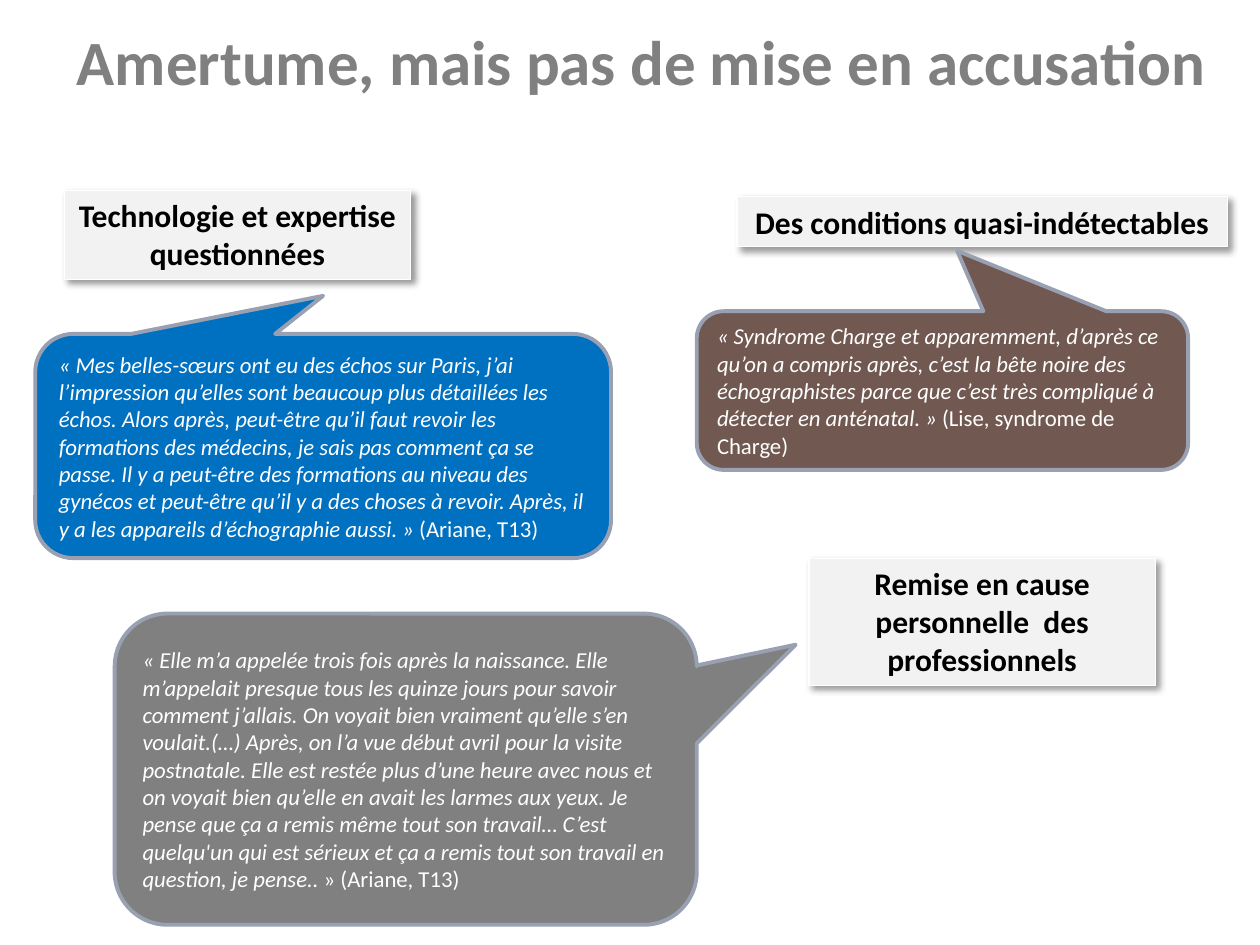
from lxml import etree
from pptx import Presentation
from pptx.dml.color import RGBColor
from pptx.enum import shapes, text
from pptx.oxml.ns import qn
from pptx.util import Inches, Pt

FONT = "Calibri"
WHITE = "FFFFFF"


def rgb(value):
    return RGBColor.from_string(value)


def add_run(paragraph, words, size, color, bold=False, italic=False):
    run = paragraph.add_run()
    run.text = words
    run.font.name = FONT
    run.font.size = Pt(size)
    run.font.color.rgb = rgb(color)
    run.font.bold = bold
    run.font.italic = italic


def paint(shape, fill, line, line_width):
    shape.shadow.inherit = False
    shape.fill.solid()
    shape.fill.fore_color.rgb = rgb(fill)
    shape.line.color.rgb = rgb(line)
    shape.line.width = Pt(line_width)


def add_drop_shadow(shape):
    """Black shadow at 40 % opacity, falling to the lower right."""
    effects = shape._element.spPr.find(qn("a:effectLst"))
    shadow = etree.SubElement(
        effects, qn("a:outerShdw"), blurRad=str(Pt(4)), dist=str(Pt(3)),
        dir=str(45 * 60000), algn="tl", rotWithShape="0")
    color = etree.SubElement(shadow, qn("a:srgbClr"), val="000000")
    etree.SubElement(color, qn("a:alpha"), val="40000")


def set_title(slide, box, words):
    title = slide.shapes.title
    title.left, title.top, title.width, title.height = map(Inches, box)
    frame = title.text_frame
    frame.word_wrap = True
    frame.auto_size = text.MSO_AUTO_SIZE.NONE
    frame.vertical_anchor = text.MSO_ANCHOR.TOP
    frame.paragraphs[0].alignment = text.PP_ALIGN.LEFT
    add_run(frame.paragraphs[0], words, 36, "808080", bold=True)


def add_theme(slide, box, words):
    theme = slide.shapes.add_shape(
        shapes.MSO_SHAPE.RECTANGLE, *map(Inches, box))
    paint(theme, "F2F2F2", WHITE, 0.75)
    add_drop_shadow(theme)
    frame = theme.text_frame
    frame.word_wrap = True
    frame.auto_size = text.MSO_AUTO_SIZE.SHAPE_TO_FIT_TEXT
    frame.vertical_anchor = text.MSO_ANCHOR.TOP
    frame.paragraphs[0].alignment = text.PP_ALIGN.CENTER
    add_run(frame.paragraphs[0], words, 18, "000000", bold=True)


def add_quote(slide, box, tip, fill, quote, speaker):
    """Speech bubble; tip is the pointer's offset from the centre, in box sizes."""
    bubble = slide.shapes.add_shape(
        shapes.MSO_SHAPE.ROUNDED_RECTANGULAR_CALLOUT, *map(Inches, box))
    bubble.adjustments[0], bubble.adjustments[1] = tip
    bubble.adjustments[2] = 0.17
    paint(bubble, fill, "98A0B2", 2.22)
    frame = bubble.text_frame
    frame.word_wrap = True
    frame.vertical_anchor = text.MSO_ANCHOR.MIDDLE
    paragraph = frame.paragraphs[0]
    paragraph.alignment = text.PP_ALIGN.LEFT
    add_run(paragraph, quote, 13, WHITE, italic=True)
    add_run(paragraph, speaker, 13, WHITE)


def main():
    deck = Presentation()
    deck.slide_width, deck.slide_height = Inches(10), Inches(7.5)
    slide = deck.slides.add_slide(deck.slide_layouts[5])

    set_title(slide, (0.51, 0.13, 9.49, 1.25),
              "Amertume, mais pas de mise en accusation")

    add_theme(slide, (0.51, 1.51, 2.75, 0.71),
              "Technologie et expertise questionnées")
    add_quote(
        slide, (0.28, 2.65, 4.57, 1.78), (0, -0.67), "0070C0",
        "« Mes belles-sœurs ont eu des échos sur Paris, j’ai l’impression "
        "qu’elles sont beaucoup plus détaillées les échos. Alors après, "
        "peut-être qu’il faut revoir les formations des médecins, je sais pas "
        "comment ça se passe. Il y a peut-être des formations au niveau des "
        "gynécos et peut-être qu’il y a des choses à revoir. Après, il y a "
        "les appareils d’échographie aussi. »",
        " (Ariane, T13)")

    add_theme(slide, (5.85, 1.56, 3.89, 0.4),
              "Des conditions quasi-indétectables")
    add_quote(
        slide, (5.53, 2.47, 3.9, 1.26), (0.03, -0.88), "715851",
        "« Syndrome Charge et apparemment, d’après ce qu’on a compris après, "
        "c’est la bête noire des échographistes parce que c’est très compliqué "
        "à détecter en anténatal. » ",
        "(Lise, syndrome de Charge)")

    add_theme(slide, (6.42, 4.43, 2.75, 1.01),
              "Remise en cause personnelle  des professionnels")
    add_quote(
        slide, (0.91, 4.87, 4.62, 2.47), (0.67, -0.4), "808080",
        "« Elle m’a appelée trois fois après la naissance. Elle m’appelait "
        "presque tous les quinze jours pour savoir comment j’allais. On voyait "
        "bien vraiment qu’elle s’en voulait.(…) Après, on l’a vue début avril "
        "pour la visite postnatale. Elle est restée plus d’une heure avec nous "
        "et on voyait bien qu’elle en avait les larmes aux yeux. Je pense que "
        "ça a remis même tout son travail… C’est quelqu'un qui est sérieux et "
        "ça a remis tout son travail en question, je pense.. ",
        "» (Ariane, T13)")

    deck.save("out.pptx")


if __name__ == "__main__":
    main()
